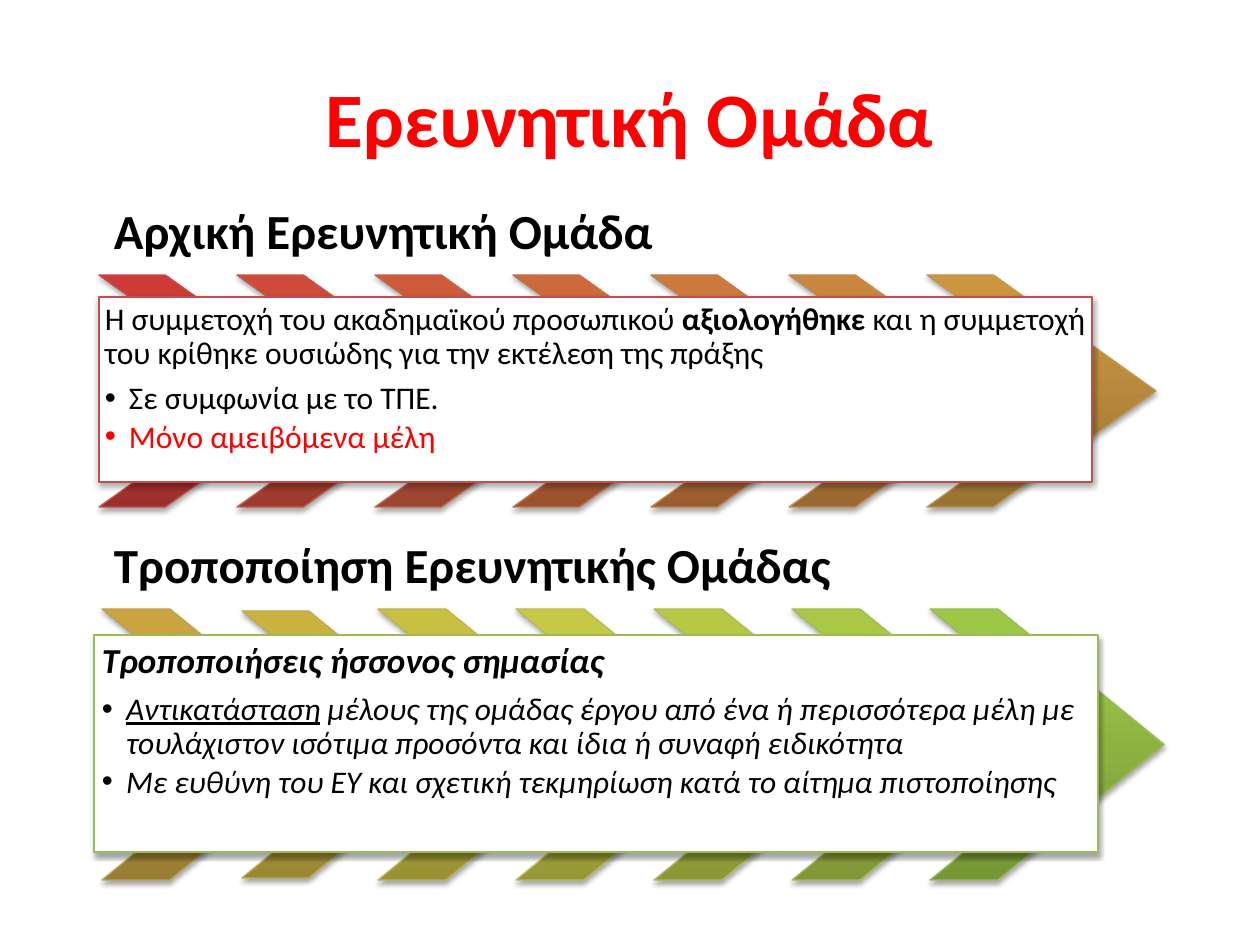
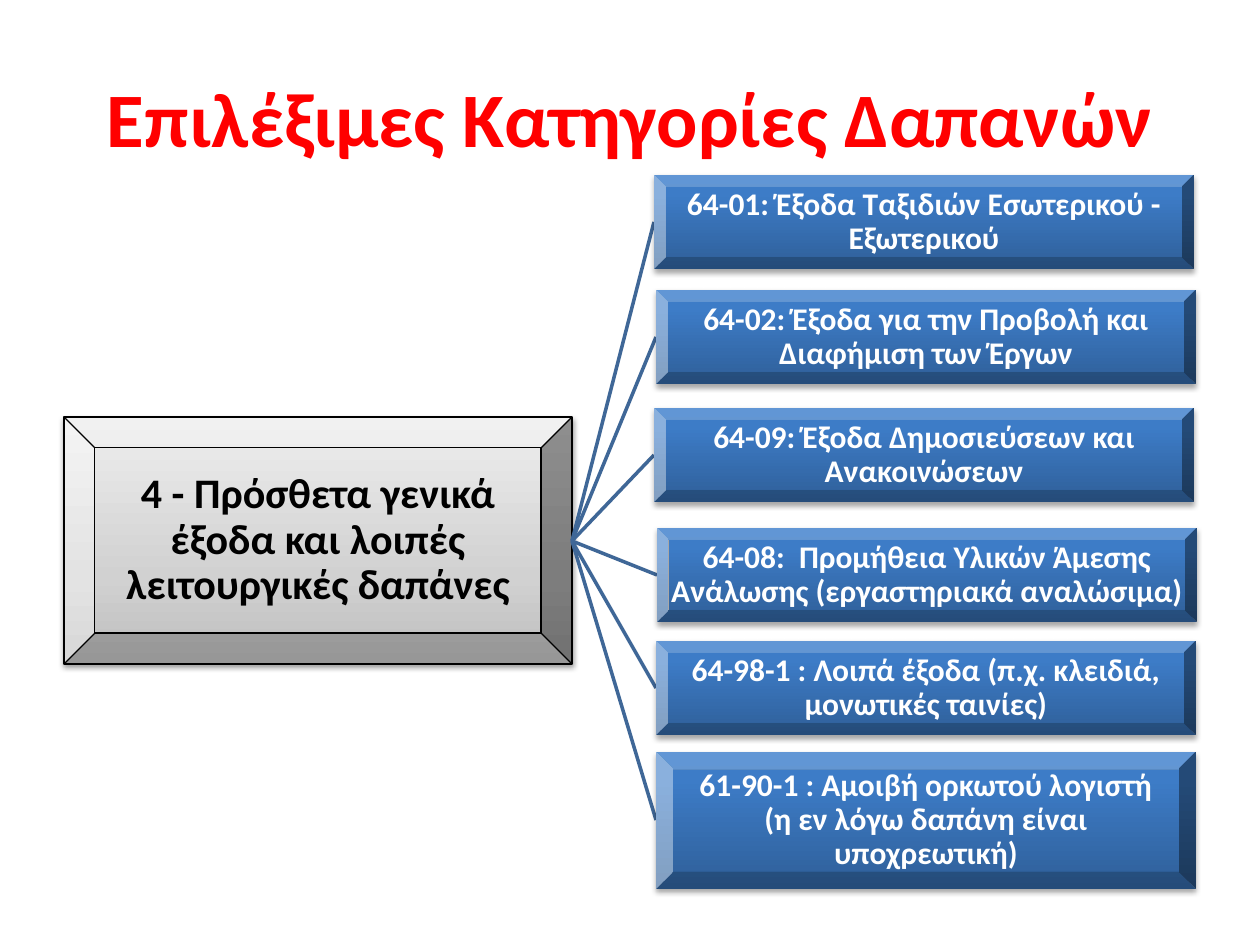
from colorsys import hls_to_rgb, rgb_to_hls
from copy import deepcopy

from lxml.etree import SubElement
from pptx import Presentation
from pptx.dml.color import RGBColor
from pptx.enum.shapes import MSO_CONNECTOR, MSO_SHAPE
from pptx.enum.text import MSO_ANCHOR, PP_ALIGN
from pptx.oxml.ns import qn
from pptx.util import Emu, Pt

PX_PER_INCH = 126
FONT = "Calibri"
RED, BLACK, WHITE = "FF0000", "000000", "FFFFFF"
RED_EDGE, GREEN_EDGE, LINK_BLUE = "C0504D", "9BBB59", "3F6797"
BLUE_STOPS = [(0, "2F5F99"), (80, "3D7CC7"), (100, "3A7CCB")]
GREY_STOPS = [(0, "BDBDBD"), (35, "D1D1D1"), (100, "EEEEEE")]
CHEVRON_STOPS = [(0, "9C2F2D", "779737"), (80, "CB3E3A", "9BC348"), (100, "CE3B37", "9DC746")]
CHEVRONS_PER_ROW = 7
CHEVRON_STEP = 138


def px(length):
    """Turn px into EMU."""
    return Emu(round(length * 914400 / PX_PER_INCH))


def color(value):
    """Turn a hex string into a colour."""
    return RGBColor.from_string(value)


def blend(first, last, share):
    """Mix two hex colours by hue, lightness and saturation."""
    ends = [rgb_to_hls(*(part / 255 for part in color(value))) for value in (first, last)]
    mixed = [start + (end - start) * share for start, end in zip(*ends)]
    return "".join(f"{round(part * 255):02X}" for part in hls_to_rgb(*mixed))


def fill_gradient(shape, stops):
    """Fill a shape from bottom to top with three colour stops."""
    shape.fill.gradient()
    shape.fill.gradient_angle = 90
    stop_list = shape._element.spPr.find(".//" + qn("a:gsLst"))
    stop_list.append(deepcopy(stop_list[0]))
    for stop, (percent, value) in zip(shape.fill.gradient_stops, stops):
        stop.position = percent / 100
        stop.color.rgb = color(value)


def add_shadow(shape, alpha=35, distance=23000):
    """Give a shape a soft shadow below it."""
    shape.shadow.inherit = False
    effects = shape._element.spPr.find(qn("a:effectLst"))
    shadow = SubElement(effects, qn("a:outerShdw"), blurRad="40000", dist=str(distance),
                        dir="5400000", rotWithShape="0")
    tone = SubElement(shadow, qn("a:srgbClr"), val=BLACK)
    SubElement(tone, qn("a:alpha"), val=str(alpha * 1000))


def add_panel(page, kind, frame, edge=None, **shadow):
    """Add a preset shape with its outline and shadow."""
    panel = page.shapes.add_shape(kind, *map(px, frame))
    add_shadow(panel, **shadow)
    if edge:
        panel.line.color.rgb = color(edge)
        panel.line.width = Pt(0.75)
    else:
        panel.line.fill.background()
    return panel


def set_frame(box, anchor, inset):
    """Set wrapping, anchor and equal insets of a text frame."""
    frame = box.text_frame
    frame.word_wrap = True
    frame.vertical_anchor = anchor
    frame.margin_left = frame.margin_top = frame.margin_right = frame.margin_bottom = px(inset)
    return frame


def style(para, size, tone=BLACK, bold=False, italic=False, align=PP_ALIGN.LEFT, after=0.35):
    """Format a paragraph and its runs."""
    para.alignment = align
    para.line_spacing = 0.9
    para.space_after = Pt(round(size * after, 1))
    for span in para.runs:
        span.font.name = FONT
        span.font.size = Pt(size)
        span.font.color.rgb = color(tone)
        span.font.bold = bold
        span.font.italic = italic


def add_spans(para, *texts):
    """Fill a paragraph with one run per text and return the runs."""
    for text in texts:
        para.add_run().text = text
    return para.runs


def add_bullet(frame, *texts, **look):
    """Add a bulleted paragraph and return its runs."""
    para = frame.add_paragraph()
    indent = px(24)
    properties = para._p.get_or_add_pPr()
    properties.set("marL", str(indent))
    properties.set("indent", str(-indent))
    SubElement(properties, qn("a:buFont"), typeface="Arial")
    SubElement(properties, qn("a:buChar"), char="•")
    spans = add_spans(para, *texts)
    style(para, 18, after=0.15, **look)
    return spans


def add_title(page, text):
    """Add the red slide title."""
    box = page.shapes.add_textbox(*map(px, (63, 38, 1134, 158)))
    frame = set_frame(box, MSO_ANCHOR.MIDDLE, 6)
    frame.text = text
    para = frame.paragraphs[0]
    style(para, 44, RED, bold=True, align=PP_ALIGN.CENTER, after=0)
    para.line_spacing = 1.0


def add_heading(page, top, text):
    """Add the heading above a chevron row."""
    box = page.shapes.add_textbox(*map(px, (99, top, 980, 90)))
    frame = set_frame(box, MSO_ANCHOR.BOTTOM, 15)
    frame.text = text
    style(frame.paragraphs[0], 28, bold=True)


def add_chevrons(page, left, top, width, height, first, inset_at=None):
    """Add a row of chevrons whose colours run on from number first."""
    for number in range(CHEVRONS_PER_ROW):
        share = (first + number) / (2 * CHEVRONS_PER_ROW - 1)
        inset = 2 if number == inset_at else 0
        frame = (left + number * CHEVRON_STEP + inset, top + inset,
                 width - 2 * inset, height - 2 * inset)
        chevron = add_panel(page, MSO_SHAPE.CHEVRON, frame, blend(RED_EDGE, GREEN_EDGE, share))
        chevron.adjustments[0] = 0.71
        fill_gradient(chevron, [(percent, blend(start, end, share))
                                for percent, start, end in CHEVRON_STOPS])


def add_card(page, frame, edge, inset):
    """Add a white card and return its text frame."""
    card = add_panel(page, MSO_SHAPE.RECTANGLE, frame, edge)
    card.fill.solid()
    card.fill.fore_color.rgb = color(WHITE)
    return set_frame(card, MSO_ANCHOR.TOP, inset)


def add_bevel(page, frame, stops, text, size, tone, inset, edge=None, **shadow):
    """Add a bevelled box with centred bold text."""
    bevel = add_panel(page, MSO_SHAPE.BEVEL, frame, edge, **shadow)
    fill_gradient(bevel, stops)
    text_frame = set_frame(bevel, MSO_ANCHOR.MIDDLE, inset)
    para = text_frame.paragraphs[0]
    para.text = text
    style(para, size, tone, bold=True, align=PP_ALIGN.CENTER)


def add_link(page, start, end):
    """Add a plain line between two points."""
    link = page.shapes.add_connector(MSO_CONNECTOR.STRAIGHT, *map(px, start + end))
    link.line.color.rgb = color(LINK_BLUE)
    link.line.width = Pt(2)
    SubElement(link._element.spPr, qn("a:effectLst"))


def build_team_slide(page):
    """Build the slide on the research team."""
    add_title(page, "Ερευνητική Ομάδα")

    add_heading(page, 185, "Αρχική Ερευνητική Ομάδα")
    add_chevrons(page, 99, 275, 229, 232, first=0)
    frame = add_card(page, (99, 297, 993, 185), RED_EDGE, 6)
    intro = frame.paragraphs[0]
    spans = add_spans(intro, "Η συμμετοχή του ακαδημαϊκού προσωπικού ", "αξιολογήθηκε",
                      " και η συμμετοχή του κρίθηκε ουσιώδης για την εκτέλεση της πράξης")
    style(intro, 18)
    spans[1].font.bold = True
    add_bullet(frame, "Σε συμφωνία με το ΤΠΕ.")
    add_bullet(frame, "Μόνο αμειβόμενα μέλη", tone=RED)

    add_heading(page, 519, "Τροποποίηση Ερευνητικής Ομάδας")
    add_chevrons(page, 102, 609, 234, 271, first=CHEVRONS_PER_ROW, inset_at=1)
    frame = add_card(page, (94, 635, 1004, 217), GREEN_EDGE, 8)
    frame.text = "Τροποποιήσεις ήσσονος σημασίας"
    style(frame.paragraphs[0], 20, bold=True, italic=True)
    spans = add_bullet(frame, "Αντικατάσταση",
                       " μέλους της ομάδας έργου από ένα ή περισσότερα μέλη με "
                       "τουλάχιστον ισότιμα προσόντα και ίδια ή συναφή ειδικότητα", italic=True)
    spans[0].font.underline = True
    add_bullet(frame, "Με ευθύνη του ΕΥ και σχετική τεκμηρίωση κατά το αίτημα πιστοποίησης",
               italic=True)


def build_costs_slide(page):
    """Build the slide on eligible cost categories."""
    add_title(page, "Επιλέξιμες Κατηγορίες Δαπανών")
    add_bevel(page, (64, 417, 508, 247), GREY_STOPS,
              "4 - Πρόσθετα γενικά έξοδα και λοιπές λειτουργικές δαπάνες",
              24, BLACK, 3, edge=BLACK, alpha=38, distance=20000)
    categories = [
        (654, 175, 94, "64-01: Έξοδα Ταξιδιών Εσωτερικού - Εξωτερικού"),
        (656, 290, 94, "64-02: Έξοδα για την Προβολή και Διαφήμιση των Έργων"),
        (654, 408, 94, "64-09: Έξοδα Δημοσιεύσεων και Ανακοινώσεων"),
        (657, 528, 94, "64-08:  Προμήθεια Υλικών Άμεσης Ανάλωσης (εργαστηριακά αναλώσιμα)"),
        (656, 641, 94, "64-98-1 : Λοιπά έξοδα (π.χ. κλειδιά, μονωτικές ταινίες)"),
        (656, 752, 137, "61-90-1 : Αμοιβή ορκωτού λογιστή\n(η εν λόγω δαπάνη είναι υποχρεωτική)"),
    ]
    for left, top, height, text in categories:
        add_link(page, (572, 541), (left, top + height // 2))
        add_bevel(page, (left, top, 540, height), BLUE_STOPS, text, 18, WHITE, 1)


def main():
    """Build and save the deck."""
    deck = Presentation()
    deck.slide_width, deck.slide_height = px(1260), px(945)
    for build in (build_team_slide, build_costs_slide):
        build(deck.slides.add_slide(deck.slide_layouts[6]))
    deck.save("out.pptx")


if __name__ == "__main__":
    main()
